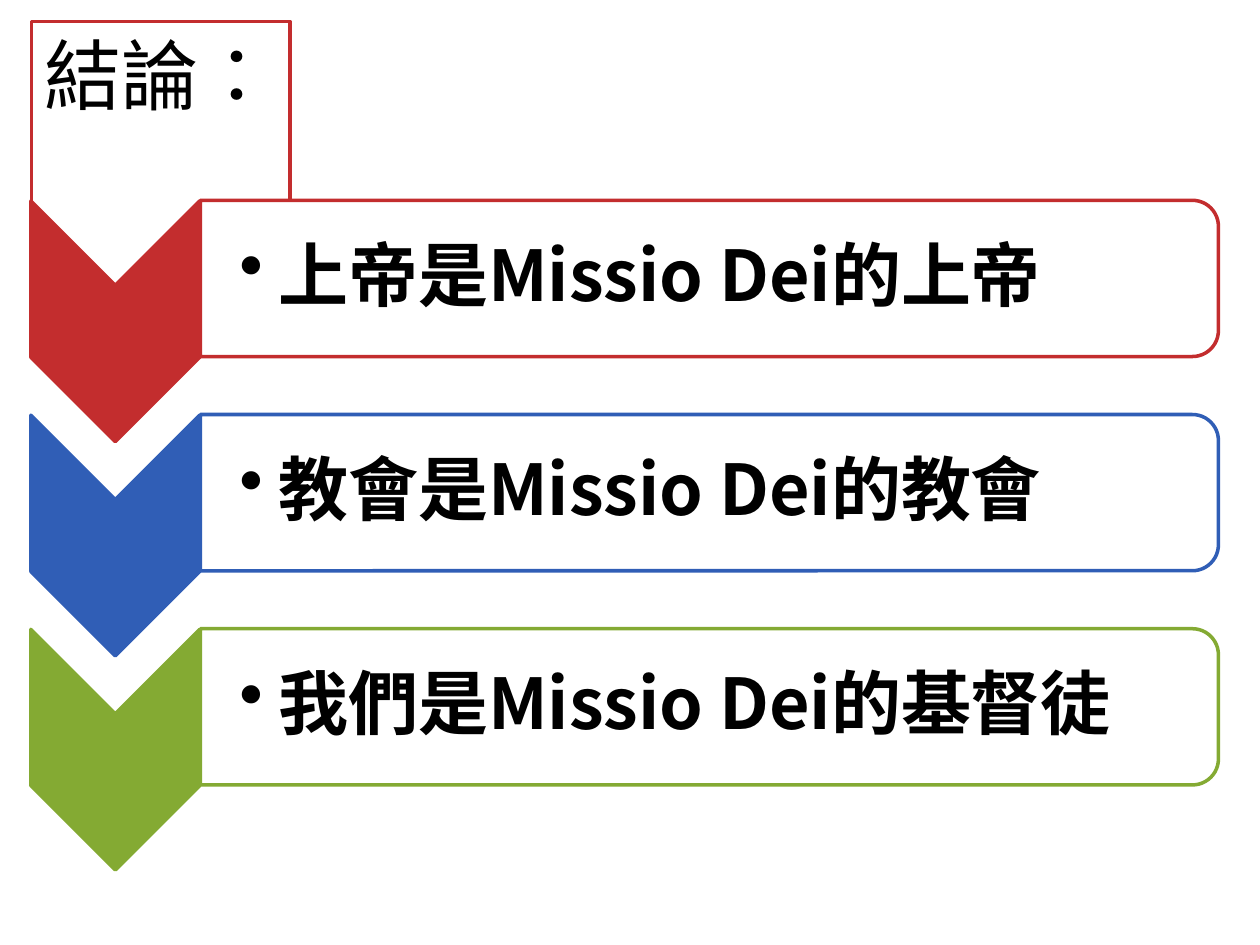
from lxml import etree
from pptx import Presentation
from pptx.dml.color import RGBColor
from pptx.enum.lang import MSO_LANGUAGE_ID
from pptx.enum.shapes import MSO_SHAPE
from pptx.enum.text import MSO_ANCHOR, MSO_AUTO_SIZE, PP_ALIGN
from pptx.oxml.ns import qn
from pptx.util import Inches, Pt

CHEVRON = MSO_SHAPE.CHEVRON
ROUNDED_BAR = MSO_SHAPE.ROUND_2_SAME_RECTANGLE
CHINESE = MSO_LANGUAGE_ID.TRADITIONAL_CHINESE
TOP = MSO_ANCHOR.TOP
MIDDLE = MSO_ANCHOR.MIDDLE
LEFT = PP_ALIGN.LEFT
GROW = MSO_AUTO_SIZE.SHAPE_TO_FIT_TEXT

COLORS = {
    "red": "C32D2E",
    "blue": "305EB6",
    "green": "84AA33",
    "white": "FFFFFF",
    "black": "000000",
}
POINTS = [
    ("red", "上帝是Missio Dei的上帝"),
    ("blue", "教會是Missio Dei的教會"),
    ("green", "我們是Missio Dei的基督徒"),
]
FIRST_TOP = 1.59
ROW_PITCH = 1.7


class ConclusionSlide:
    title_font = "Calibri"
    body_font = "Noto Sans CJK SC"
    line_width = Pt(2)

    def __init__(self, presentation):
        self.slide = presentation.slides.add_slide(presentation.slide_layouts[5])

    def color(self, name):
        return RGBColor.from_string(COLORS[name])

    def paint(self, shape, fill, line):
        shape.fill.solid()
        shape.fill.fore_color.rgb = self.color(fill)
        shape.line.color.rgb = self.color(line)
        shape.line.width = self.line_width

    def add_run(self, paragraph, text, font_name, size, bold=False):
        run = paragraph.add_run()
        run.text = text
        font = run.font
        font.name = font_name
        font.size = Pt(size)
        font.bold = bold
        font.color.rgb = self.color("black")
        font.language_id = CHINESE
        east_asian = etree.SubElement(run._r.get_or_add_rPr(), qn("a:ea"))
        east_asian.set("typeface", self.body_font)

    def add_title(self, text):
        title = self.slide.shapes.title
        title.left, title.top = Inches(0.25), Inches(0.17)
        title.width, title.height = Inches(2.05), Inches(0.84)
        self.paint(title, "white", "red")
        frame = title.text_frame
        frame.word_wrap = False
        frame.auto_size = GROW
        frame.vertical_anchor = TOP
        paragraph = frame.paragraphs[0]
        paragraph.alignment = LEFT
        self.add_run(paragraph, text, self.title_font, 44)

    def add_turned_shape(self, kind, left, top, width, height, fill, line):
        shape = self.slide.shapes.add_shape(
            kind, Inches(left), Inches(top), Inches(width), Inches(height)
        )
        shape.rotation = 90
        shape.shadow.inherit = False
        self.paint(shape, fill, line)

    def add_bullet_text(self, top, text):
        box = self.slide.shapes.add_textbox(
            Inches(1.59), Inches(top), Inches(8.02), Inches(1.12)
        )
        frame = box.text_frame
        frame.word_wrap = True
        frame.vertical_anchor = MIDDLE
        frame.margin_left = Inches(0.31)
        frame.margin_top = frame.margin_right = frame.margin_bottom = Inches(0.03)
        paragraph = frame.paragraphs[0]
        paragraph.level = 1
        paragraph.line_spacing = 0.9
        properties = paragraph._p.get_or_add_pPr()
        properties.set("marL", str(Inches(0.31)))
        properties.set("indent", str(-Inches(0.31)))
        etree.SubElement(properties, qn("a:buChar")).set("char", "•")
        self.add_run(paragraph, text, self.body_font, 40, bold=True)

    def add_point(self, top, color, text):
        self.add_turned_shape(CHEVRON, -0.04, top + 0.29, 1.91, 1.34, color, color)
        self.add_turned_shape(ROUNDED_BAR, 5.01, top - 3.42, 1.24, 8.08, "white", color)
        self.add_bullet_text(top + 0.06, text)


def main():
    presentation = Presentation()
    presentation.slide_width = Inches(10)
    presentation.slide_height = Inches(7.5)
    conclusion = ConclusionSlide(presentation)
    conclusion.add_title("結論：")
    for row, (color, text) in enumerate(POINTS):
        conclusion.add_point(FIRST_TOP + row * ROW_PITCH, color, text)
    presentation.save("out.pptx")


if __name__ == "__main__":
    main()
